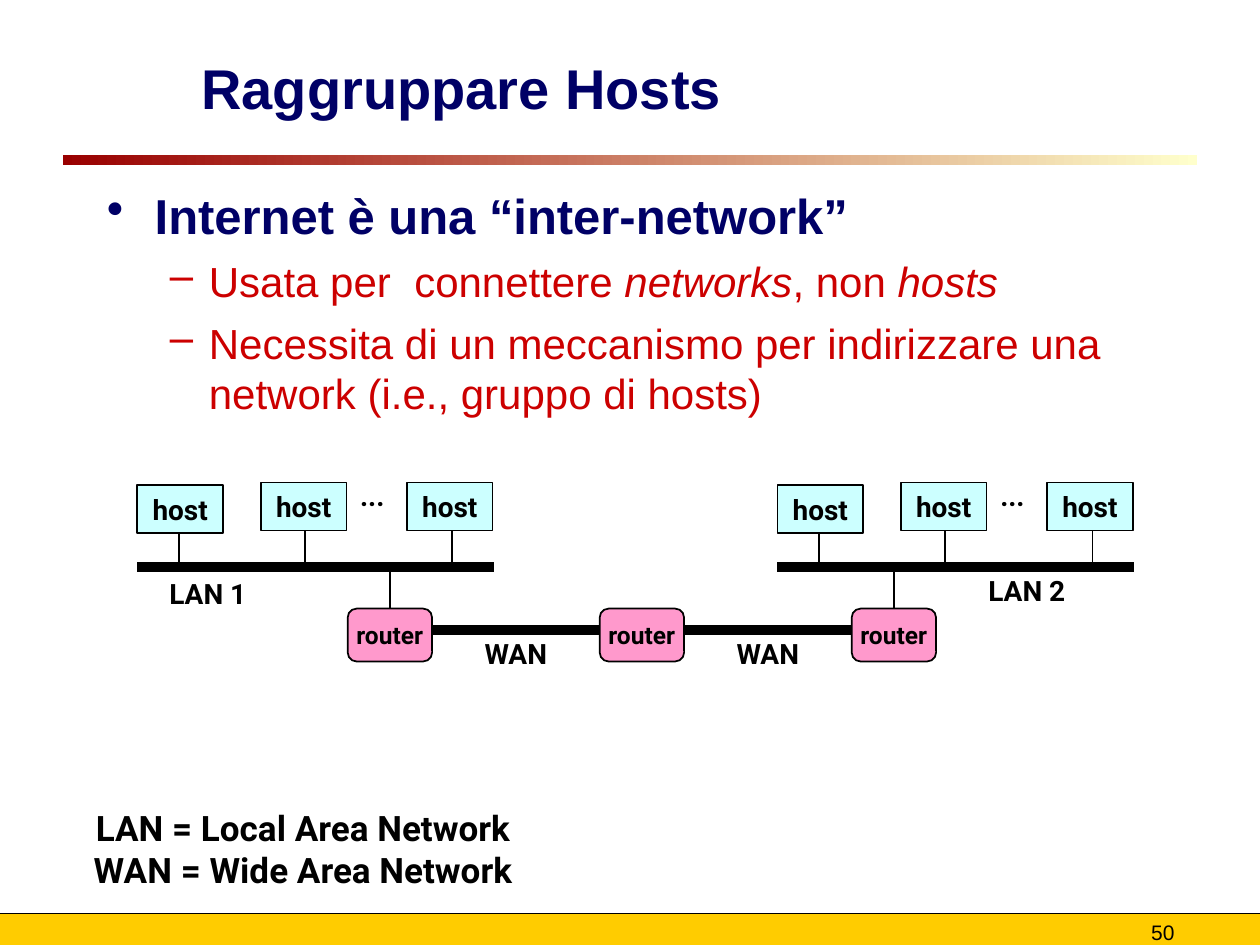
from lxml.etree import SubElement
from pptx import Presentation
from pptx.dml.color import RGBColor
from pptx.enum.shapes import MSO_CONNECTOR, MSO_SHAPE
from pptx.enum.text import MSO_ANCHOR, PP_ALIGN
from pptx.oxml.ns import qn
from pptx.util import Inches, Pt

NAVY = RGBColor(0x00, 0x00, 0x66)
RED = RGBColor(0xCC, 0x00, 0x00)
BLACK = RGBColor(0x00, 0x00, 0x00)
GOLD = RGBColor(0xFF, 0xCC, 0x00)
DARK_RED = RGBColor(0x99, 0x00, 0x00)
CREAM = RGBColor(0xFF, 0xFF, 0xCC)
CYAN = RGBColor(0xCC, 0xFF, 0xFF)
PINK = RGBColor(0xFF, 0x99, 0xCC)

# Content
TITLE = "Raggruppare Hosts"
PAGE_NUMBER = "50"
# Each point: level, list of (text, italic)
POINTS = [
    (0, [("Internet è una “inter-network”", False)]),
    (1, [("Usata per  connettere ", False), ("networks", True),
         (", non ", False), ("hosts", True)]),
    (1, [("Necessita di un meccanismo per indirizzare una network "
          "(i.e., gruppo di hosts)", False)]),
]
# Per level: bullet, left margin, hanging indent, size, colour, bold
LEVELS = [("•", 0.38, 0.38, 28, NAVY, True), ("–", 0.81, 0.31, 24, RED, False)]
LEGEND = ["LAN = Local Area Network", "WAN = Wide Area Network"]
# Each LAN: left edge, label, label offset, label top
LANS = [(1.09, "LAN 1", 0.14, 4.52), (6.17, "LAN 2", 1.56, 4.5)]
# Each host: box offset, box top, offset of its drop line
HOSTS = [(0, 3.85, 0.33), (0.98, 3.83, 1.33), (2.14, 3.83, 2.5)]

# Diagram grid
WIDTH, HEIGHT = 10, 7.5
FOOTER_TOP = 7.25
LAN_Y, LAN_WIDTH = 4.5, 2.83
WAN_Y = 5
ROUTER_LEFT, ROUTER_STEP, ROUTER_COUNT = 2.76, 2, 3
ROUTER_TOP, ROUTER_WIDTH, ROUTER_HEIGHT = 4.83, 0.67, 0.42

deck = Presentation()
deck.slide_width, deck.slide_height = Inches(WIDTH), Inches(HEIGHT)
page = deck.slides.add_slide(deck.slide_layouts[6])


def add_span(para, text, size, color=BLACK, bold=True, italic=False, font="Roboto"):
    span = para.add_run()
    span.text = text
    span.font.name, span.font.size = font, Pt(size)
    span.font.bold, span.font.italic = bold, italic
    span.font.color.rgb = color


def add_box(left, top, width, height, wrap=True, anchor=MSO_ANCHOR.TOP):
    box = page.shapes.add_textbox(*map(Inches, (left, top, width, height)))
    box.text_frame.word_wrap = wrap
    box.text_frame.vertical_anchor = anchor
    return box.text_frame


def add_label(left, top, width, text, wrap=False):
    para = add_box(left, top, width, 0.37, wrap, MSO_ANCHOR.MIDDLE).paragraphs[0]
    para.alignment = PP_ALIGN.CENTER
    add_span(para, text, 16)


def add_shape(kind, left, top, width, height, fill=None):
    shape = page.shapes.add_shape(kind, *map(Inches, (left, top, width, height)))
    shape.shadow.inherit = False
    shape.line.fill.background()
    if fill is not None:
        shape.fill.solid()
        shape.fill.fore_color.rgb = fill
    return shape


def add_node(kind, left, top, width, height, fill, text, size):
    node = add_shape(kind, left, top, width, height, fill)
    node.line.color.rgb, node.line.width = BLACK, Pt(1)
    frame = node.text_frame
    frame.word_wrap = False
    frame.vertical_anchor = MSO_ANCHOR.MIDDLE
    frame.paragraphs[0].alignment = PP_ALIGN.CENTER
    add_span(frame.paragraphs[0], text, size)
    return node


def add_line(x1, y1, x2, y2, weight=1):
    line = page.shapes.add_connector(MSO_CONNECTOR.STRAIGHT, *map(Inches, (x1, y1, x2, y2)))
    line.line.color.rgb, line.line.width = BLACK, Pt(weight)
    SubElement(line._element.spPr, qn("a:effectLst"))


# Footer band, page number and title rule
add_shape(MSO_SHAPE.RECTANGLE, 0, FOOTER_TOP, WIDTH, HEIGHT - FOOTER_TOP, GOLD)
rule = add_shape(MSO_SHAPE.RECTANGLE, 0.5, 1.23, 9, 0.08)
rule.fill.gradient()
rule.fill.gradient_angle = 0
for stop, color in zip(rule.fill.gradient_stops, (DARK_RED, CREAM)):
    stop.color.rgb = color
add_line(0, FOOTER_TOP, WIDTH, FOOTER_TOP, 0.75)
number = add_box(8.5, FOOTER_TOP, 0.92, 0.25).paragraphs[0]
number.alignment = PP_ALIGN.RIGHT
add_span(number, PAGE_NUMBER, 12, bold=False, font="Arial")

# Title
title = add_box(1.5, 0.28, 7.75, 0.83, anchor=MSO_ANCHOR.MIDDLE)
add_span(title.paragraphs[0], TITLE, 32, NAVY, font="Arial")

# Bulleted points
body = add_box(0.75, 1.39, 8.5, 5.59)
body.margin_top = Inches(0.08)
for index, (level, spans) in enumerate(POINTS):
    bullet, margin, hang, size, color, bold = LEVELS[level]
    para = body.add_paragraph() if index else body.paragraphs[0]
    para.level = level
    para.space_before = Pt(6.5 if index else 0)
    properties = para._p.get_or_add_pPr()
    properties.set("marL", str(Inches(margin)))
    properties.set("indent", str(-Inches(hang)))
    SubElement(properties, qn("a:buChar")).set("char", bullet)
    for text, italic in spans:
        add_span(para, text, size, color, bold, italic, "Arial")

# LANs: bus, drop lines, hosts and labels
for left, name, name_offset, name_top in LANS:
    add_line(left, LAN_Y, left + LAN_WIDTH, LAN_Y, 6)
    for offset, top, drop in HOSTS:
        add_line(left + drop, 4.17, left + drop, LAN_Y)
        add_node(MSO_SHAPE.RECTANGLE, left + offset, top, 0.68, 0.38, CYAN, "host", 16)
    add_label(left + name_offset, name_top, 0.84, name)
    add_label(left + 1.67, 3.75, 0.39, "...", wrap=True)

# Routers, with WAN links between them and drops from the outer two
for index in range(ROUTER_COUNT):
    left = ROUTER_LEFT + index * ROUTER_STEP
    right = left + ROUTER_WIDTH
    router = add_node(MSO_SHAPE.ROUNDED_RECTANGLE, left, ROUTER_TOP,
                      ROUTER_WIDTH, ROUTER_HEIGHT, PINK, "router", 14)
    router.adjustments[0] = 0.17
    if index in (0, ROUTER_COUNT - 1):
        middle = left + ROUTER_WIDTH / 2
        add_line(middle, LAN_Y, middle, ROUTER_TOP)
    if index < ROUTER_COUNT - 1:
        add_line(right, WAN_Y, left + ROUTER_STEP, WAN_Y, 6)
        add_label(left + 0.97, WAN_Y, 0.73, "WAN")

# Legend
legend = add_box(0.55, 6.35, 3.71, 0.77, wrap=False)
for index, text in enumerate(LEGEND):
    para = legend.add_paragraph() if index else legend.paragraphs[0]
    para.alignment = PP_ALIGN.CENTER
    add_span(para, text, 20)

deck.save("out.pptx")
